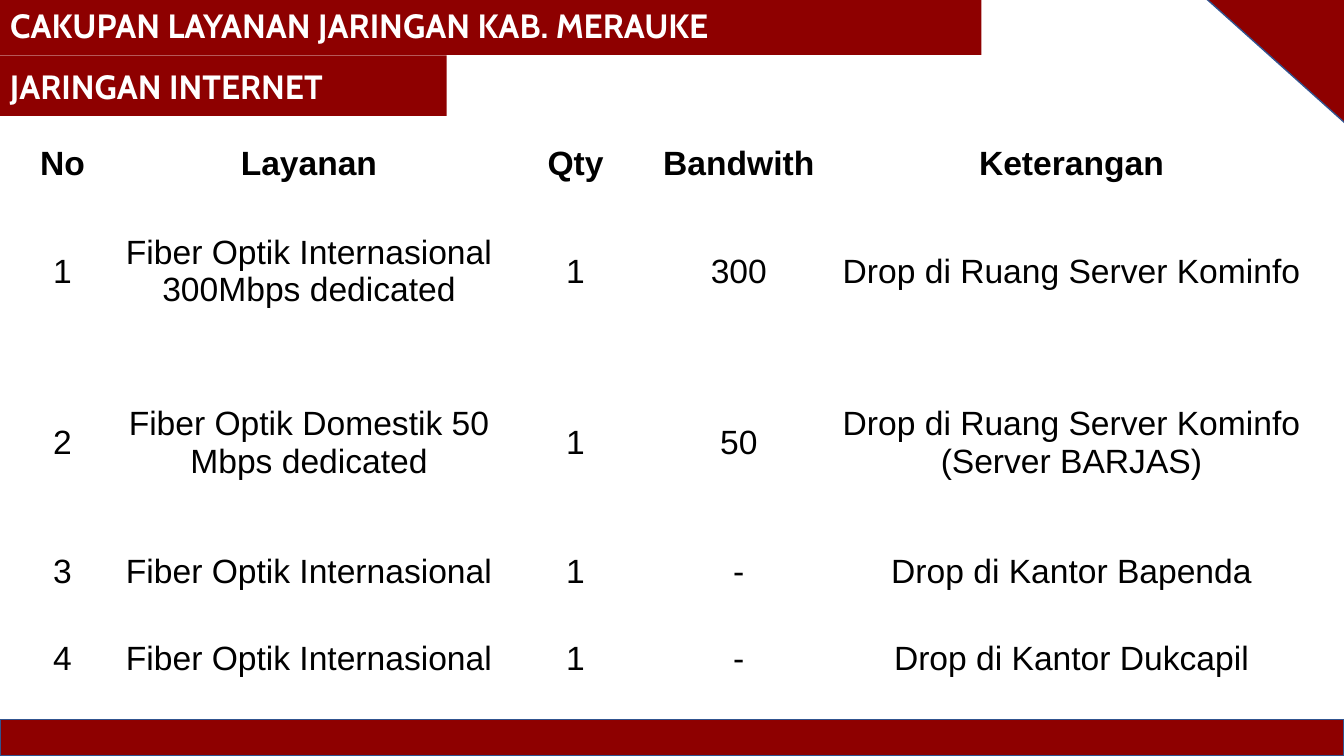
import pptx
import pptx.util
import pptx.dml.color
import pptx.enum.shapes
import pptx.enum.text

Pt = pptx.util.Pt
RGBColor = pptx.dml.color.RGBColor
MSO_SHAPE = pptx.enum.shapes.MSO_SHAPE
PP_ALIGN = pptx.enum.text.PP_ALIGN
MSO_ANCHOR = pptx.enum.text.MSO_ANCHOR

MAROON = RGBColor(0x8E, 0x00, 0x00)
NAVY = RGBColor(0x31, 0x53, 0x8F)
WHITE = RGBColor(0xFF, 0xFF, 0xFF)
BLACK = RGBColor(0x00, 0x00, 0x00)

COLUMN_WIDTHS = [76.3, 275.8, 105.1, 128.2, 347]
ROW_HEIGHTS = [31.7, 122.4, 122.4, 61.9, 61.9]
SERVICES = [
    ["No", "Layanan", "Qty", "Bandwith", "Keterangan"],
    ["1", "Fiber Optik Internasional 300Mbps dedicated", "1", "300",
     "Drop di Ruang Server Kominfo"],
    ["2", "Fiber Optik Domestik 50 Mbps dedicated", "1", "50",
     "Drop di Ruang Server Kominfo (Server BARJAS)"],
    ["3", "Fiber Optik Internasional", "1", "-", "Drop di Kantor Bapenda"],
    ["4", "Fiber Optik Internasional", "1", "-", "Drop di Kantor Dukcapil"],
]


def write_text(tf, text, font="Arial", size=24, color=BLACK, bold=False,
               align=PP_ALIGN.CENTER):
    p = tf.paragraphs[0]
    p.alignment = align
    r = p.add_run()
    r.text = text
    r.font.name = font
    r.font.size = Pt(size)
    r.font.bold = bold
    r.font.color.rgb = color


class SlideBuilder:
    def __init__(self, slide, fill, outline, heading_font):
        self.slide = slide
        self.fill = fill
        self.outline = outline
        self.heading_font = heading_font

    def shape(self, kind, x, y, w, h, rotation=0, outlined=True):
        sp = self.slide.shapes.add_shape(kind, Pt(x), Pt(y), Pt(w), Pt(h))
        sp.shadow.inherit = False
        sp.rotation = rotation
        sp.fill.solid()
        sp.fill.fore_color.rgb = self.fill
        if outlined:
            sp.line.color.rgb = self.outline
            sp.line.width = Pt(1)
        else:
            sp.line.fill.background()
        return sp

    def heading(self, sp, text):
        tf = sp.text_frame
        tf.word_wrap = True
        tf.auto_size = pptx.enum.text.MSO_AUTO_SIZE.NONE
        tf.vertical_anchor = MSO_ANCHOR.MIDDLE
        write_text(tf, text, font=self.heading_font, color=WHITE, bold=True,
                   align=PP_ALIGN.LEFT)

    def title(self, text, x, y, w, h):
        sp = self.slide.shapes.title
        sp.left, sp.top, sp.width, sp.height = Pt(x), Pt(y), Pt(w), Pt(h)
        sp.fill.solid()
        sp.fill.fore_color.rgb = self.fill
        self.heading(sp, text)

    def subtitle(self, text, x, y, w, h):
        sp = self.shape(MSO_SHAPE.RECTANGLE, x, y, w, h, outlined=False)
        self.heading(sp, text)

    def table(self, rows, x, y, widths, heights):
        frame = self.slide.shapes.add_table(
            len(rows), len(widths), Pt(x), Pt(y), Pt(sum(widths)), Pt(sum(heights)))
        table = frame.table
        table.horz_banding = False
        for column, width in zip(table.columns, widths):
            column.width = Pt(width)
        for i, (row, height) in enumerate(zip(rows, heights)):
            table.rows[i].height = Pt(height)
            for j, text in enumerate(row):
                cell = table.cell(i, j)
                cell.fill.background()
                cell.vertical_anchor = MSO_ANCHOR.MIDDLE
                cell.margin_left = cell.margin_right = cell.margin_top = Pt(0.5)
                cell.margin_bottom = Pt(0)
                write_text(cell.text_frame, text, bold=i == 0)


def main():
    prs = pptx.Presentation()
    prs.slide_width, prs.slide_height = Pt(960), Pt(540)
    s = prs.slides.add_slide(prs.slide_layouts[5])
    builder = SlideBuilder(s, MAROON, NAVY, "Cabin")
    builder.shape(MSO_SHAPE.RECTANGLE, 0, 514, 960, 25.5)
    builder.shape(MSO_SHAPE.RIGHT_TRIANGLE, 861, -1.5, 101, 90.5, rotation=180)
    builder.title("CAKUPAN LAYANAN JARINGAN KAB. MERAUKE", 0, -3.9, 701, 43.2)
    builder.subtitle("JARINGAN INTERNET", 0, 39.6, 319, 43.2)
    builder.table(SERVICES, 6.5, 100.8, COLUMN_WIDTHS, ROW_HEIGHTS)
    prs.save("out.pptx")


if __name__ == "__main__":
    main()
